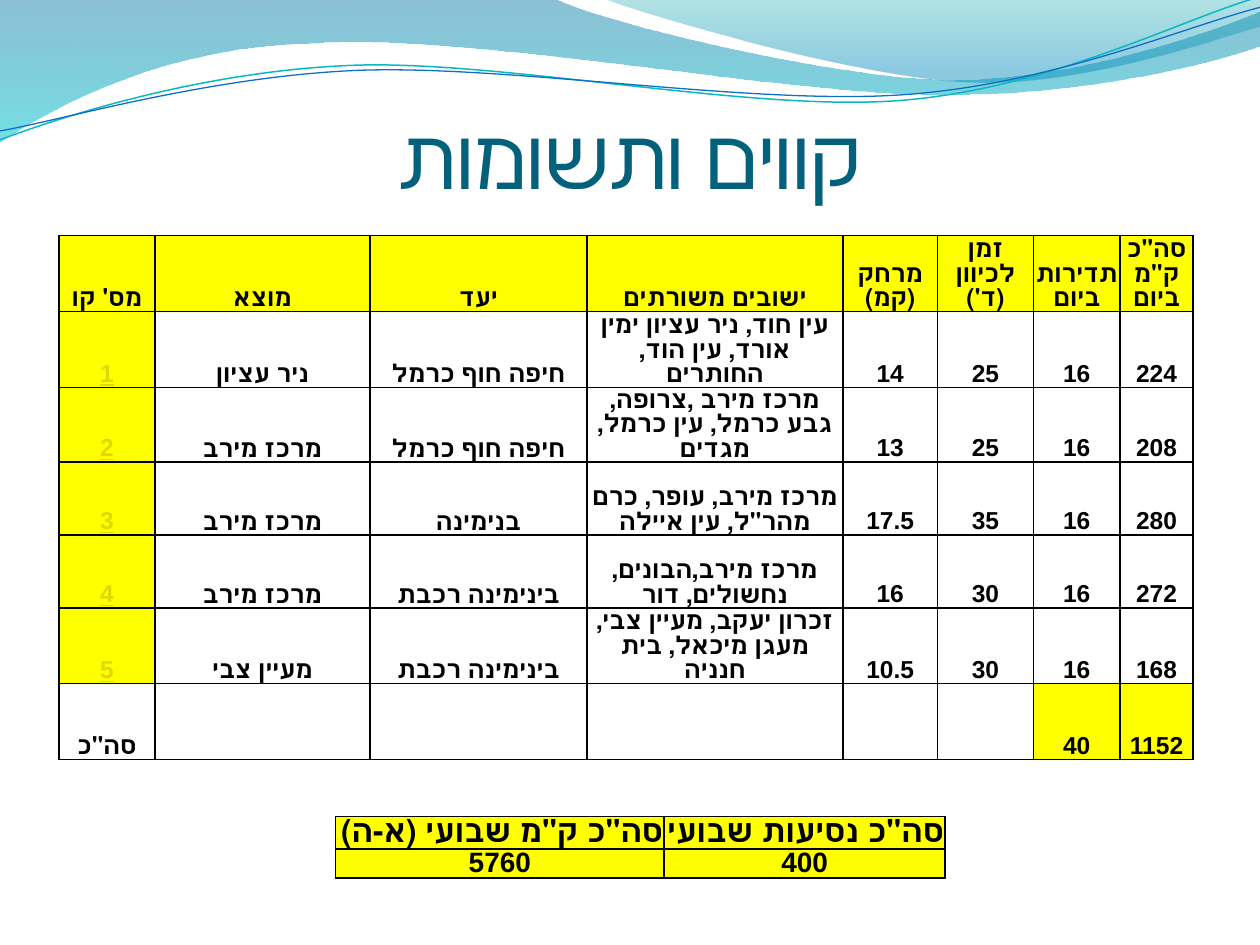
from dataclasses import dataclass

from lxml import etree
from pptx import Presentation
from pptx.dml.color import RGBColor
from pptx.enum.text import MSO_ANCHOR, PP_ALIGN
from pptx.oxml.ns import qn
from pptx.util import Cm, Pt

BLACK = RGBColor(0x00, 0x00, 0x00)
YELLOW = RGBColor(0xFF, 0xFF, 0x00)
LINK = RGBColor(0xE2, 0xD7, 0x00)
TITLE = RGBColor(0x04, 0x61, 0x7B)
DEEP_BLUE = RGBColor(0x00, 0x74, 0xA1)
CYAN = RGBColor(0x00, 0xC6, 0xCF)
TEAL = RGBColor(0x00, 0xA1, 0xA9)
SKY = RGBColor(0x00, 0x8B, 0xBF)
TEAL_LINE = RGBColor(0x0A, 0xB8, 0xBF)
BLUE_LINE = RGBColor(0x0F, 0x6F, 0xC6)
CENTER, RIGHT = PP_ALIGN.CENTER, PP_ALIGN.RIGHT
BOTTOM = MSO_ANCHOR.BOTTOM

Point = tuple[float, float]


@dataclass
class Stop:
    position: float
    color: RGBColor
    alpha: int


@dataclass
class Wave:
    start: Point
    segments: list[tuple[Point, ...]]
    stops: tuple[Stop, ...] = ()
    line: RGBColor | None = None
    width: float = 0


@dataclass
class CellStyle:
    size: int
    align: PP_ALIGN = CENTER
    fill: RGBColor | None = None
    color: RGBColor = BLACK
    underline: bool = False


WAVES = [
    Wave((0, 0), [
        ((11.18, -0.03),),
        ((12.09, 0.43), (16.87, 1.6), (19.25, 1.6)),
        ((21.67, 1.6), (24.33, 0.66), (25.4, 0.23)),
        ((25.43, 0.91),),
        ((24.97, 1.12), (22.1, 1.93), (18.95, 1.91)),
        ((15.8, 1.91), (9.7, 0.71), (6.53, 0.86)),
        ((3.28, 0.91), (1.17, 2.11), (-0.03, 2.87)),
    ], stops=(Stop(0, DEEP_BLUE, 45), Stop(1, CYAN, 55))),
    Wave((12.17, -0.03), [
        ((12.93, 0.28), (17.32, 1.57), (19.53, 1.65)),
        ((21.74, 1.75), (24.41, 0.81), (25.4, 0.53)),
        ((25.4, 0),),
    ], stops=(Stop(0, TEAL, 30), Stop(0.8, SKY, 45))),
    Wave((0, 2.82), [
        ((1.22, 2.36), (4.01, 1.45), (7.04, 1.32)),
        ((10.03, 1.19), (15.06, 2.26), (18.11, 2.03)),
        ((21.16, 1.8), (23.83, 0.38), (25.35, -0.05)),
    ], line=TEAL_LINE, width=0.85),
    Wave((0, 2.64), [
        ((1.19, 2.44), (4.17, 1.55), (7.19, 1.42)),
        ((10.24, 1.3), (15.16, 2.13), (18.21, 1.91)),
        ((21.23, 1.7), (23.9, 0.53), (25.4, 0.15)),
    ], line=BLUE_LINE, width=0.75),
]

ROUTES = [
    ["מס' קו", "מוצא", "יעד", "ישובים משורתים", "מרחק (קמ)",
     "זמן לכיוון (ד')", "תדירות ביום", "סה\"כ ק\"מ ביום"],
    ["1", "ניר עציון", "חיפה חוף כרמל",
     "עין חוד, ניר עציון ימין אורד, עין הוד, החותרים", "14", "25", "16", "224"],
    ["2", "מרכז מירב", "חיפה חוף כרמל",
     "מרכז מירב ,צרופה, גבע כרמל, עין כרמל, מגדים", "13", "25", "16", "208"],
    ["3", "מרכז מירב", "בנימינה",
     "מרכז מירב, עופר, כרם מהר\"ל, עין איילה", "17.5", "35", "16", "280"],
    ["4", "מרכז מירב", "בינימינה רכבת",
     "מרכז מירב,הבונים, נחשולים, דור", "16", "30", "16", "272"],
    ["5", "מעיין צבי", "בינימינה רכבת",
     "זכרון יעקב, מעיין צבי, מעגן מיכאל, בית חנניה", "10.5", "30", "16", "168"],
    ["סה\"כ", "", "", "", "", "", "40", "1152"],
]
ROUTE_COLS = [1.93, 4.34, 4.37, 5.16, 1.91, 1.93, 1.75, 1.47]
ROUTE_ROWS = [1.53, 1.53, 1.48, 1.47, 1.47, 1.53, 1.53]
WEEKLY = [["סה\"כ ק\"מ שבועי (א-ה)", "סה\"כ נסיעות שבועי"], ["5760", "400"]]
WEEKLY_COLS = [6.63, 5.66]
WEEKLY_ROWS = [0.56, 0.56]


def route_style(row: int, col: int) -> CellStyle:
    last = len(ROUTES) - 1
    if row == 0 or (row == last and col >= 6):
        return CellStyle(14, fill=YELLOW)
    if col == 0 and row < last:
        return CellStyle(14, fill=YELLOW, color=LINK, underline=True)
    return CellStyle(14)


def weekly_style(row: int, col: int) -> CellStyle:
    return CellStyle(18, RIGHT, YELLOW) if row == 0 else CellStyle(16, fill=YELLOW)


def bend_segments(sp, segments: list[tuple[Point, ...]]) -> None:
    lines = iter(list(sp.element.iter(qn("a:lnTo"))))
    for segment in segments:
        group = [next(lines) for _ in segment]
        if len(group) == 3:
            curve = etree.Element(qn("a:cubicBezTo"))
            group[0].addprevious(curve)
            for line in group:
                curve.append(line[0])
                line.getparent().remove(line)


def draw_wave(s, wave: Wave) -> None:
    builder = s.shapes.build_freeform(Cm(wave.start[0]), Cm(wave.start[1]))
    builder.add_line_segments(
        [(Cm(x), Cm(y)) for segment in wave.segments for x, y in segment],
        close=bool(wave.stops))
    sp = builder.convert_to_shape()
    bend_segments(sp, wave.segments)
    sp.shadow.inherit = False
    if wave.line is None:
        sp.line.fill.background()
    else:
        sp.line.color.rgb = wave.line
        sp.line.width = Pt(wave.width)
    if not wave.stops:
        sp.fill.background()
        return
    sp.fill.gradient()
    sp.fill.gradient_angle = 270
    for target, stop in zip(sp.fill.gradient_stops, wave.stops):
        target.color.rgb = stop.color
        target.position = stop.position
    for clr, stop in zip(sp.element.spPr.iter(qn("a:srgbClr")), wave.stops):
        etree.SubElement(clr, qn("a:alpha")).set("val", str(stop.alpha * 1000))


def add_text(tf, text: str, size: int, font: str, color: RGBColor, align: PP_ALIGN):
    p = tf.paragraphs[0]
    p.alignment = align
    if any("א" <= letter <= "ת" for letter in text):
        p._p.get_or_add_pPr().set("rtl", "1")
    r = p.add_run()
    r.text = text
    r.font.size = Pt(size)
    r.font.name = font
    r.font.color.rgb = color
    return r


def add_borders(cell) -> None:
    tc_pr = cell._tc.get_or_add_tcPr()
    for i, side in enumerate(("lnL", "lnR", "lnT", "lnB")):
        ln = etree.Element(qn(f"a:{side}"), w=str(Pt(1)))
        fill = etree.SubElement(ln, qn("a:solidFill"))
        etree.SubElement(fill, qn("a:srgbClr")).set("val", str(BLACK))
        tc_pr.insert(i, ln)


def draw_table(s, left: float, top: float, cols: list[float], rows: list[float],
               texts: list[list[str]], style_of) -> None:
    table = s.shapes.add_table(len(rows), len(cols), Cm(left), Cm(top),
                               Cm(sum(cols)), Cm(sum(rows))).table
    table.first_row = table.horz_banding = False
    for column, width in zip(table.columns, cols):
        column.width = Cm(width)
    for row, height in zip(table.rows, rows):
        row.height = Cm(height)
    for i, line in enumerate(texts):
        for j, text in enumerate(line):
            cell, style = table.cell(i, j), style_of(i, j)
            cell.vertical_anchor = BOTTOM
            cell.margin_left = cell.margin_right = cell.margin_top = Cm(0.02)
            cell.margin_bottom = Cm(0)
            if style.fill is None:
                cell.fill.background()
            else:
                cell.fill.solid()
                cell.fill.fore_color.rgb = style.fill
            add_borders(cell)
            if text:
                tf = cell.text_frame
                r = add_text(tf, text, style.size, "Arial", style.color, style.align)
                r.font.bold = True
                r.font.underline = style.underline
                tf.paragraphs[0].line_spacing = Pt(style.size)


def draw_title(s, text: str) -> None:
    tf = s.shapes.add_textbox(Cm(1.27), Cm(1.96), Cm(22.86), Cm(2.21)).text_frame
    tf.word_wrap = True
    tf.vertical_anchor = BOTTOM
    tf.margin_left = tf.margin_right = tf.margin_bottom = Cm(0)
    tf.margin_top = Cm(0.13)
    add_text(tf, text, 48, "Calibri", TITLE, CENTER)


def main() -> None:
    prs = Presentation()
    prs.slide_width, prs.slide_height = Cm(25.4), Cm(19.05)
    s = prs.slides.add_slide(prs.slide_layouts[6])
    for wave in WAVES:
        draw_wave(s, wave)
    draw_title(s, "קווים ותשומות")
    draw_table(s, 1.19, 4.75, ROUTE_COLS, ROUTE_ROWS, ROUTES, route_style)
    draw_table(s, 6.76, 16.46, WEEKLY_COLS, WEEKLY_ROWS, WEEKLY, weekly_style)
    prs.save("out.pptx")


if __name__ == "__main__":
    main()
